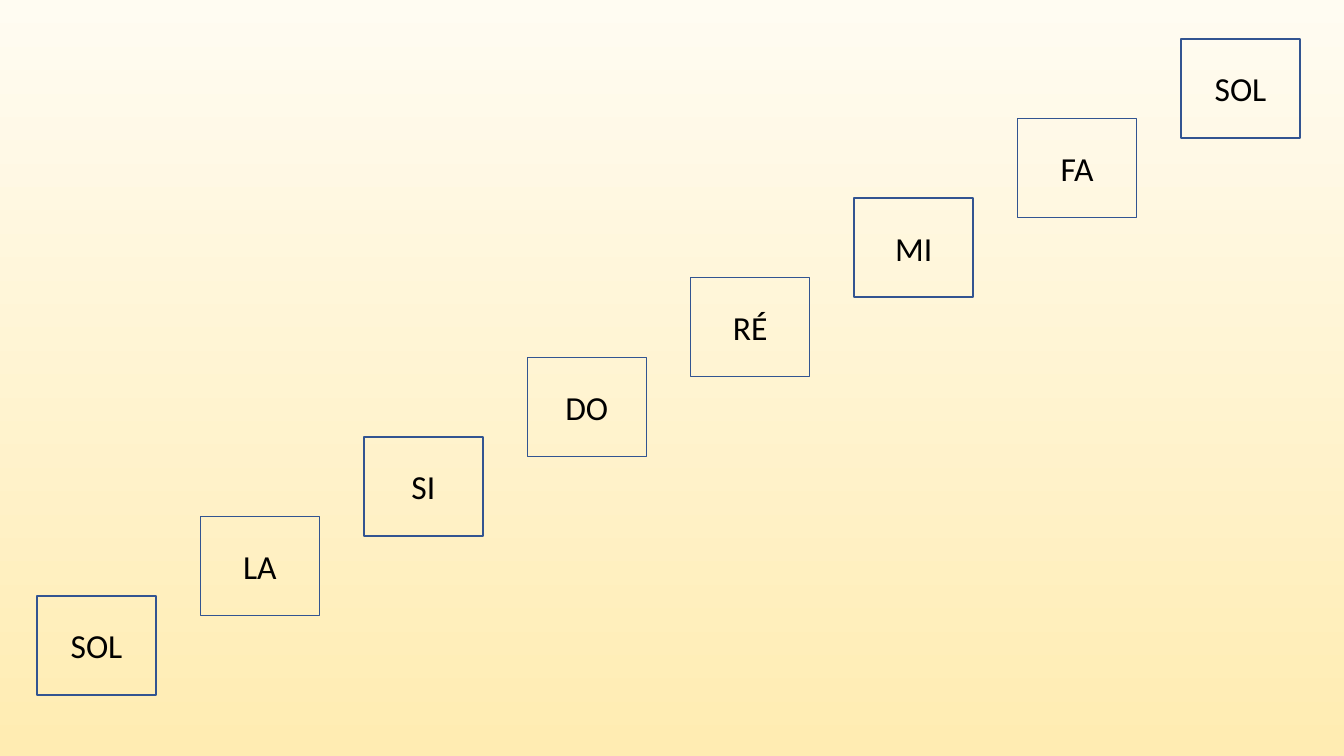
from pptx import Presentation
from pptx.dml.color import RGBColor as RGB
from pptx.enum.shapes import MSO_SHAPE as SHAPE
from pptx.enum.text import MSO_ANCHOR as ANCHOR, PP_ALIGN as ALIGN
from pptx.util import Pt

PX = 914400 / 100.8
SLIDE_W, SLIDE_H = 1344, 756
NOTE_W, NOTE_H = 119, 99
COLORS = {
    "sky": "FFFCF2",
    "sand": "FFECB2",
    "border": "325491",
    "text": "000000",
}
NOTES = ["SOL", "LA", "SI", "DO", "RÉ", "MI", "FA", "SOL"]


def px(n):
    return round(n * PX)


def color(name):
    return RGB.from_string(COLORS[name])


def paint_background(slide):
    fill = slide.background.fill
    fill.gradient()
    fill.gradient_angle = 270
    for stop, name, position in zip(fill.gradient_stops, ("sky", "sand"), (0, 0.99)):
        stop.color.rgb = color(name)
        stop.position = position


def add_note(slide, name, x, y, w, h):
    sp = slide.shapes.add_shape(SHAPE.RECTANGLE, px(x), px(y), px(w), px(h))
    sp.shadow.inherit = False
    sp.fill.background()
    sp.line.color.rgb = color("border")
    sp.line.width = Pt(1)
    tf = sp.text_frame
    tf.vertical_anchor = ANCHOR.MIDDLE
    p = tf.paragraphs[0]
    p.text = name
    p.alignment = ALIGN.CENTER
    p.font.name = "Calibri"
    p.font.size = Pt(24)
    p.font.color.rgb = color("text")


def add_scale(slide, notes, x, y, w, h):
    steps = len(notes) - 1
    dx = (w - NOTE_W) / steps
    dy = (h - NOTE_H) / steps
    for i, name in enumerate(notes):
        add_note(slide, name, x + i * dx, y + (steps - i) * dy, NOTE_W, NOTE_H)


def main():
    prs = Presentation()
    prs.slide_width, prs.slide_height = px(SLIDE_W), px(SLIDE_H)
    slide = prs.slides.add_slide(prs.slide_layouts[6])
    paint_background(slide)
    add_scale(slide, NOTES, 37, 39, 1263, 656)
    prs.save("out.pptx")


if __name__ == "__main__":
    main()
